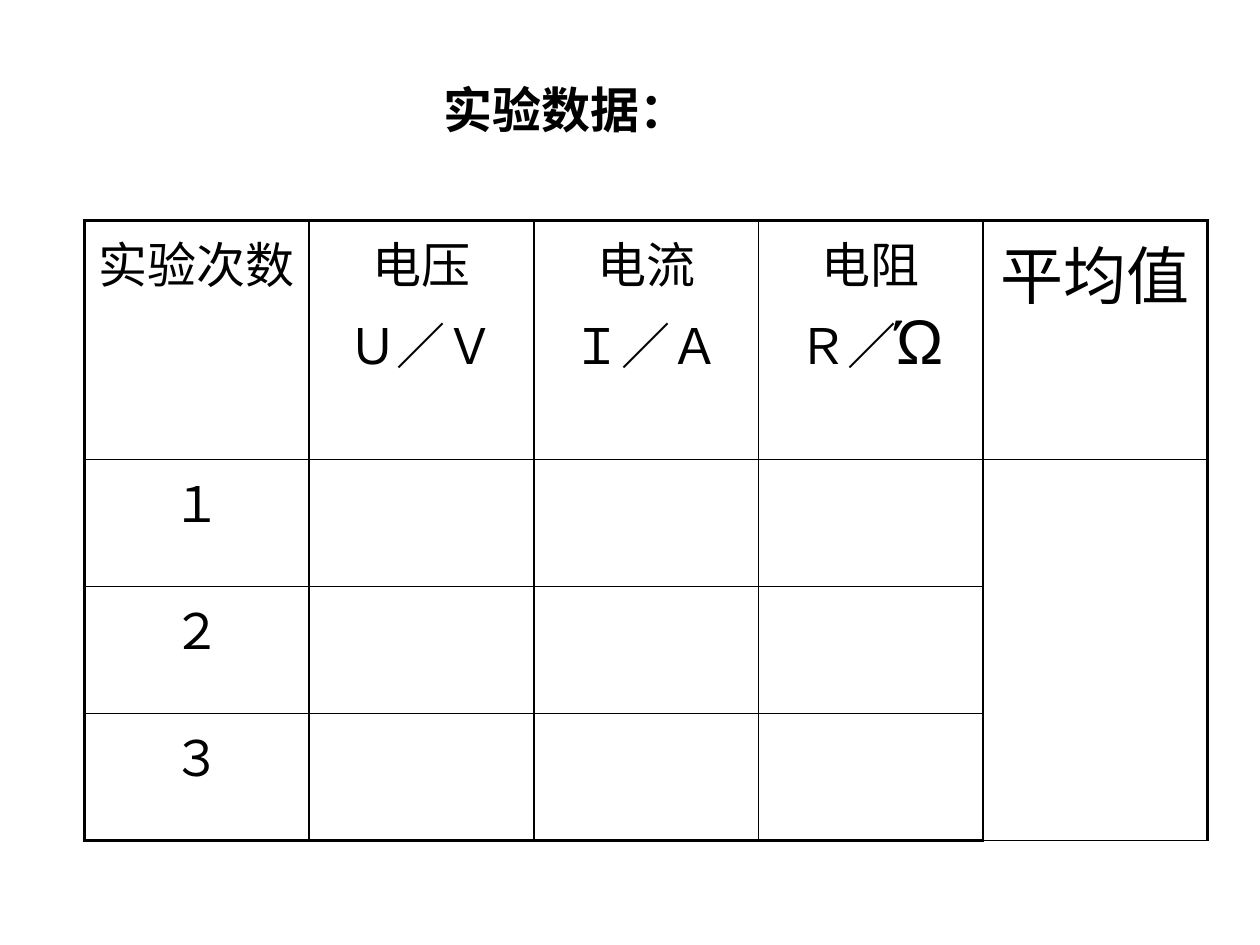
from lxml.etree import SubElement
from pptx import Presentation
from pptx.dml.color import RGBColor
from pptx.enum.text import MSO_ANCHOR as Anchor, PP_ALIGN as Align
from pptx.oxml.ns import qn
from pptx.util import Pt

# Content: each cell is a list of paragraphs, each paragraph a list of (text, size)
TITLE = "实验数据："
HEADERS = [
    [[("实验次数", 28)]],
    [[("电压", 28)], [("Ｕ／Ｖ", 28)]],
    [[("电流", 28)], [("Ｉ／Ａ", 28)]],
    [[("电阻", 28)], [("Ｒ／", 28), ("Ώ", 36)]],
    [[("平均值", 36)]],
]
TRIALS = ["１", "２", "３"]
COLORS = {"ink": "000000"}

# Layout in points
TABLE_LEFT, TABLE_TOP = 48.24, 126
COLUMN_WIDTH, HEADER_HEIGHT, TRIAL_HEIGHT = 128.4, 136.5, 72.6
OUTER_LINE, INNER_LINE = 2.25, 1
INK = RGBColor.from_string(COLORS["ink"])


def add_border(cell, side, width):
    line = SubElement(cell._tc.get_or_add_tcPr(), qn(f"a:ln{side}"), w=str(int(Pt(width))))
    fill = SubElement(line, qn("a:solidFill"))
    SubElement(fill, qn("a:srgbClr"), val=COLORS["ink"])


def write_cell(cell, paragraphs):
    frame = cell.text_frame
    for index, pieces in enumerate(paragraphs):
        para = frame.add_paragraph() if index else frame.paragraphs[0]
        para.alignment = Align.CENTER
        if index:
            para.space_before = Pt(5.6)
        for text, size in pieces:
            span = para.add_run()
            span.text = text
            span.font.name = "Arial"
            span.font.size = Pt(size)
            span.font.color.rgb = INK


deck = Presentation()
deck.slide_width, deck.slide_height = Pt(720), Pt(540)
page = deck.slides.add_slide(deck.slide_layouts[5])

# Title
title = page.shapes.title
title.left, title.top, title.width, title.height = Pt(246.24), Pt(41.76), Pt(193), Pt(41)
title.text_frame.text = TITLE
title.text_frame.vertical_anchor = Anchor.MIDDLE
heading = title.text_frame.paragraphs[0]
heading.alignment = Align.LEFT
heading.font.name = "Times New Roman"
heading.font.size = Pt(28)
heading.font.bold = True
heading.font.color.rgb = INK

# Table grid
row_count, column_count = len(TRIALS) + 1, len(HEADERS)
table = page.shapes.add_table(
    row_count, column_count, Pt(TABLE_LEFT), Pt(TABLE_TOP),
    Pt(COLUMN_WIDTH * column_count), Pt(HEADER_HEIGHT + TRIAL_HEIGHT * len(TRIALS)),
).table
table.first_row = table.horz_banding = False
for column in table.columns:
    column.width = Pt(COLUMN_WIDTH)
for index, row in enumerate(table.rows):
    row.height = Pt(TRIAL_HEIGHT if index else HEADER_HEIGHT)

# Thick frame, thin inner lines, no fill
for r in range(row_count):
    for c in range(column_count):
        cell = table.cell(r, c)
        edges = {"L": c == 0, "R": c == column_count - 1,
                 "T": r == 0, "B": r == row_count - 1}
        for side, is_outer in edges.items():
            add_border(cell, side, OUTER_LINE if is_outer else INNER_LINE)
        cell.fill.background()

# One average cell spans all trials
table.cell(1, column_count - 1).merge(table.cell(row_count - 1, column_count - 1))

# Cell text
for c, paragraphs in enumerate(HEADERS):
    write_cell(table.cell(0, c), paragraphs)
for r, number in enumerate(TRIALS, start=1):
    write_cell(table.cell(r, 0), [[(number, 28)]])

deck.save("out.pptx")
